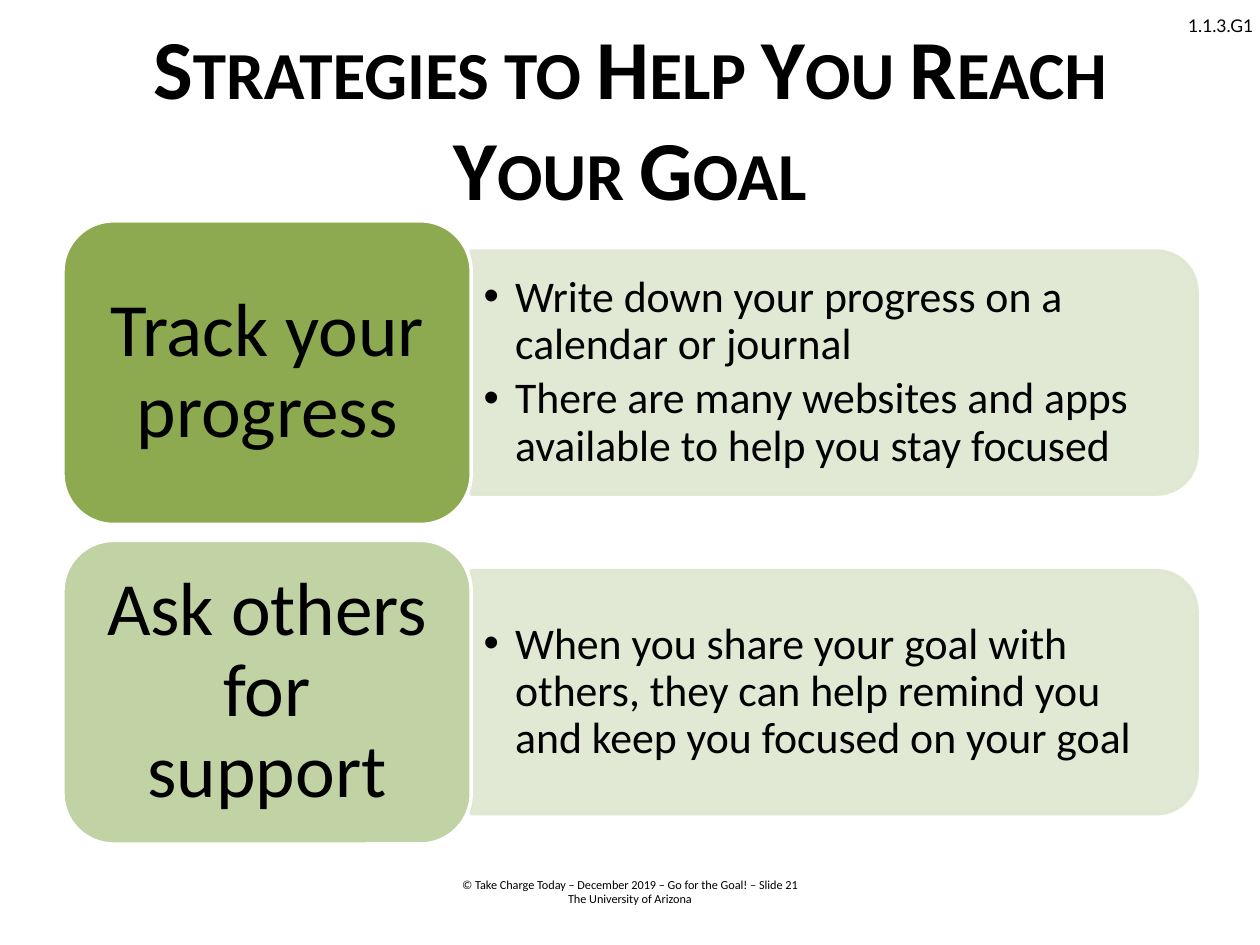
from lxml.etree import SubElement
from pptx import Presentation
from pptx.dml.color import RGBColor
from pptx.enum.shapes import MSO_SHAPE
from pptx.enum.text import MSO_ANCHOR, MSO_AUTO_SIZE, PP_ALIGN
from pptx.oxml.ns import qn
from pptx.util import Pt


def paint(color, hue, alpha=None):
    """Set a colour format's hex colour and, if given, its opacity in percent."""
    color.rgb = RGBColor.from_string(hue)
    if alpha:
        node = color._xFill.find(qn("a:srgbClr"))
        SubElement(node, qn("a:alpha"), val=str(alpha * 1000))


def write(frame, lines, size, font="Calibri", align=PP_ALIGN.LEFT, space=1.0, bullet=False):
    frame.word_wrap = True
    frame.auto_size = MSO_AUTO_SIZE.NONE
    for i, line in enumerate(lines):
        para = frame.paragraphs[0] if i == 0 else frame.add_paragraph()
        para.alignment = align
        para.line_spacing = space
        if bullet:
            props = para._p.get_or_add_pPr()
            props.set("marL", str(Pt(18)))
            props.set("indent", str(Pt(-18)))
            para.space_after = Pt(4)
            SubElement(props, qn("a:buFont"), typeface="Arial")
            SubElement(props, qn("a:buChar"), char="•")
        run = para.add_run()
        run.text = line
        run.font.name = font
        run.font.size = Pt(size)
        paint(run.font.color, "000000")


deck = Presentation()
deck.slide_width, deck.slide_height = Pt(720), Pt(540)
slide = deck.slides.add_slide(deck.slide_layouts[5])
shapes = slide.shapes

# Title
title = shapes.title
title.left, title.top, title.width, title.height = Pt(36), Pt(21.6), Pt(648), Pt(90)
frame = title.text_frame
frame.vertical_anchor = MSO_ANCHOR.MIDDLE
write(frame, ["Strategies to Help You Reach Your Goal"], 48, align=PP_ALIGN.CENTER)
run = frame.paragraphs[0].runs[0]
run.font.bold = True
run._r.get_or_add_rPr().set("cap", "small")

# Lesson code and footer
code = shapes.add_textbox(Pt(671.8), Pt(5), Pt(60), Pt(19.4))
write(code.text_frame, ["1.1.3.G1"], 10, "Lato")
foot = shapes.add_textbox(Pt(90), Pt(497.5), Pt(540), Pt(24.5))
write(foot.text_frame, ["© Take Charge Today – December 2019 – Go for the Goal! – Slide 21",
                        "The University of Arizona"], 7, align=PP_ALIGN.CENTER)

# Strategy rows: a label block with a panel of tips to its right
rows = [
    ("Track your progress", "8DAA51",
     ["Write down your progress on a calendar or journal",
      "There are many websites and apps available to help you stay focused"]),
    ("Ask others for support", "C1D3A5",
     ["When you share your goal with others, they can help remind you "
      "and keep you focused on your goal"]),
]
left, top, step = 36, 126.2, 182.6
wide, high = 233.3, 173.5
long, deep = 414.7, 138.9
edge = left + wide

for i, (name, hue, tips) in enumerate(rows):
    y = top + i * step
    mid = y + high / 2

    # The panel is an upright shape turned a quarter to the right
    panel = shapes.add_shape(MSO_SHAPE.ROUND_2_SAME_RECTANGLE,
                             Pt(edge + (long - deep) / 2), Pt(mid - long / 2),
                             Pt(deep), Pt(long))
    panel.rotation = 90
    panel.shadow.inherit = False
    panel.fill.solid()
    paint(panel.fill.fore_color, "DEE7D1", 90)
    panel.line.width = Pt(2)
    paint(panel.line.color, "DEE7D1", 90)

    text = shapes.add_textbox(Pt(edge), Pt(mid - 62.7), Pt(408), Pt(125.4))
    text.text_frame.vertical_anchor = MSO_ANCHOR.MIDDLE
    write(text.text_frame, tips, 25, space=0.9, bullet=True)

    block = shapes.add_shape(MSO_SHAPE.ROUNDED_RECTANGLE, Pt(left), Pt(y), Pt(wide), Pt(high))
    block.shadow.inherit = False
    block.fill.solid()
    paint(block.fill.fore_color, hue)
    block.line.width = Pt(2)
    paint(block.line.color, "FFFFFF")
    frame = block.text_frame
    frame.vertical_anchor = MSO_ANCHOR.MIDDLE
    frame.margin_left = frame.margin_right = Pt(13)
    frame.margin_top = frame.margin_bottom = Pt(6.5)
    write(frame, [name], 43, align=PP_ALIGN.CENTER, space=0.9)

deck.save("out.pptx")
